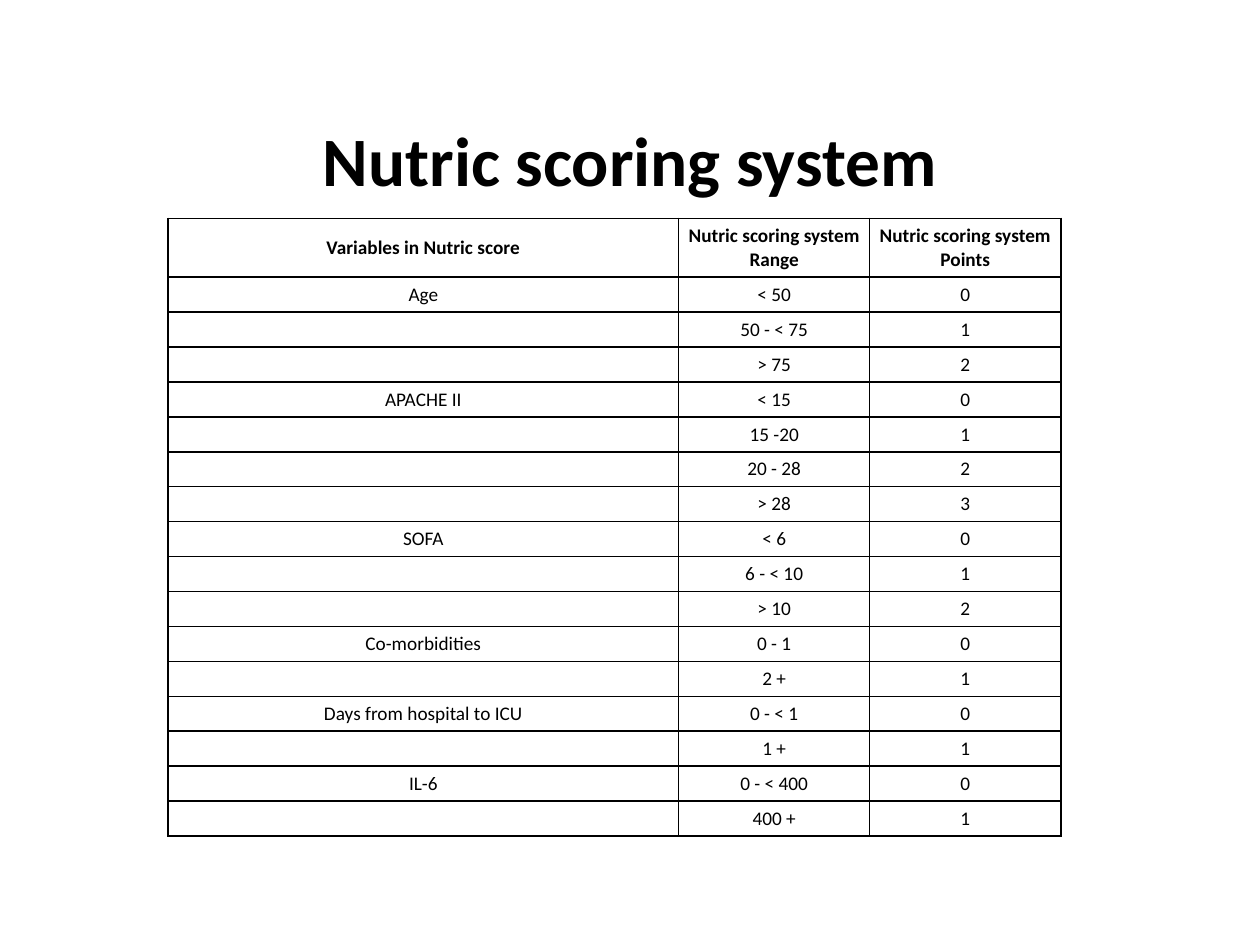
import pptx
import pptx.dml.color
import pptx.enum.text
import pptx.oxml
import pptx.oxml.ns
import pptx.util

Pt = pptx.util.Pt
ALIGN = pptx.enum.text.PP_ALIGN
ANCHOR = pptx.enum.text.MSO_ANCHOR
BLACK = pptx.dml.color.RGBColor(0, 0, 0)
FACE = "Calibri"

TITLE = "Nutric scoring system"
HEADS = (
    "Variables in Nutric score",
    "Nutric scoring system Range",
    "Nutric scoring system Points",
)
SCORES = [
    ("Age", ["< 50", "50 - < 75", "> 75"]),
    ("APACHE II", ["< 15", "15 -20", "20 - 28", "> 28"]),
    ("SOFA", ["< 6", "6 - < 10", "> 10"]),
    ("Co-morbidities", ["0 - 1", "2 +"]),
    ("Days from hospital to ICU", ["0 - < 1", "1 +"]),
    ("IL-6", ["0 - < 400", "400 +"]),
]

LEFT, TOP = 96, 124.8
WIDTHS = (291.8, 109.2, 109.2)
HEAD_H, ROW_H = 33.6, 19.96
INSET = 2.88


def style(para, size, bold):
    para.alignment = ALIGN.CENTER
    font = para.font
    font.name, font.size, font.bold = FACE, Pt(size), bold
    font.color.rgb = BLACK


def frame(cell):
    props = cell._tc.get_or_add_tcPr()
    for side in "LRTB":
        props.append(pptx.oxml.parse_xml(
            f'<a:ln{side} {pptx.oxml.ns.nsdecls("a")} w="12700"><a:solidFill>'
            f'<a:srgbClr val="{BLACK}"/></a:solidFill></a:ln{side}>'))


def fill(cell, text, bold):
    cell.text = text
    cell.vertical_anchor = ANCHOR.MIDDLE
    cell.margin_left = cell.margin_right = Pt(INSET)
    cell.margin_top = cell.margin_bottom = Pt(INSET)
    style(cell.text_frame.paragraphs[0], 11, bold)
    frame(cell)
    cell.fill.background()


def add_title(slide):
    title = slide.shapes.title
    title.left, title.top = Pt(36), Pt(21.6)
    title.width, title.height = Pt(648), Pt(90)
    box = title.text_frame
    box.text = TITLE
    box.word_wrap = True
    box.auto_size = pptx.enum.text.MSO_AUTO_SIZE.NONE
    box.vertical_anchor = ANCHOR.MIDDLE
    box.margin_top, box.margin_bottom = Pt(48.3), Pt(0)
    style(box.paragraphs[0], 39.6, True)


def add_scores(slide):
    rows = [HEADS]
    for name, ranges in SCORES:
        for points, span in enumerate(ranges):
            rows.append(("" if points else name, span, str(points)))
    height = HEAD_H + ROW_H * (len(rows) - 1)
    table = slide.shapes.add_table(
        len(rows), len(HEADS), Pt(LEFT), Pt(TOP), Pt(sum(WIDTHS)), Pt(height)
    ).table
    table.horz_banding = False
    for col, width in zip(table.columns, WIDTHS):
        col.width = Pt(width)
    for i, row in enumerate(rows):
        table.rows[i].height = Pt(ROW_H if i else HEAD_H)
        for j, text in enumerate(row):
            fill(table.cell(i, j), text, i == 0)


def main():
    deck = pptx.Presentation()
    deck.slide_width, deck.slide_height = Pt(720), Pt(540)
    slide = deck.slides.add_slide(deck.slide_layouts[5])
    add_title(slide)
    add_scores(slide)
    deck.save("out.pptx")


if __name__ == "__main__":
    main()
